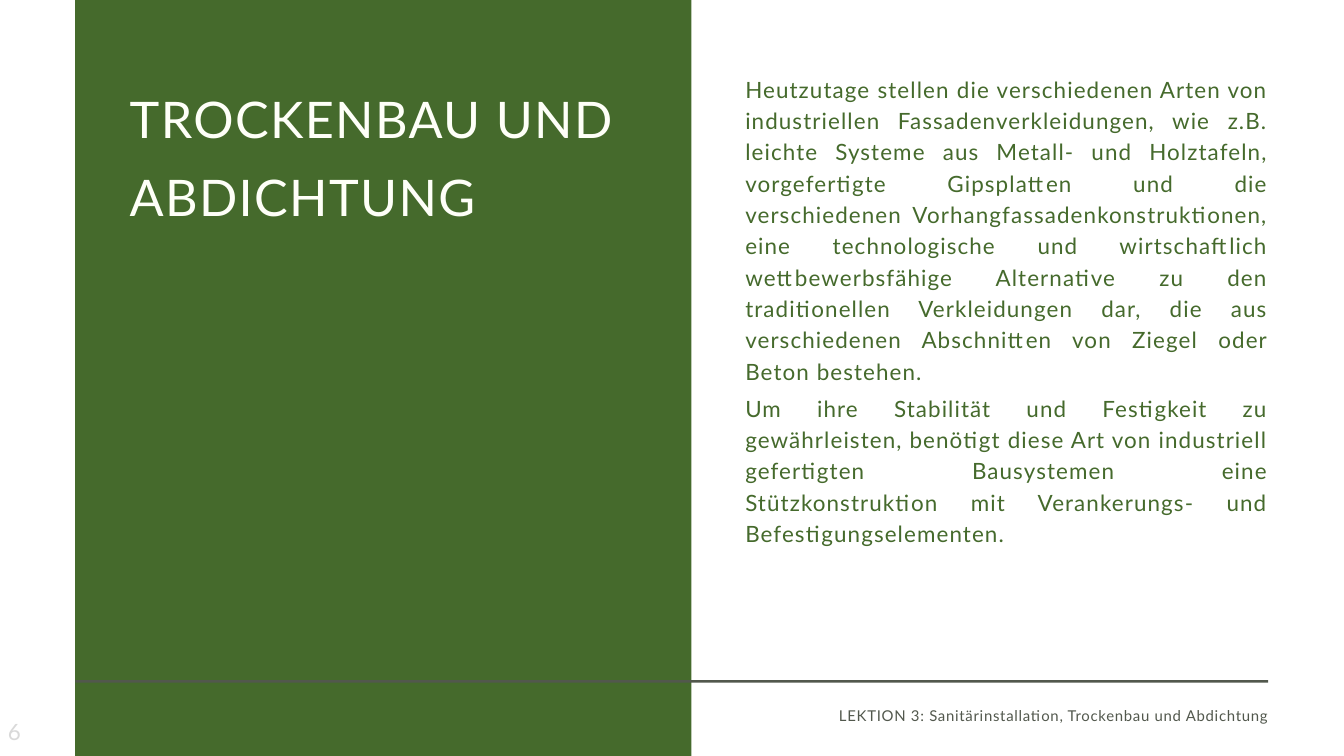
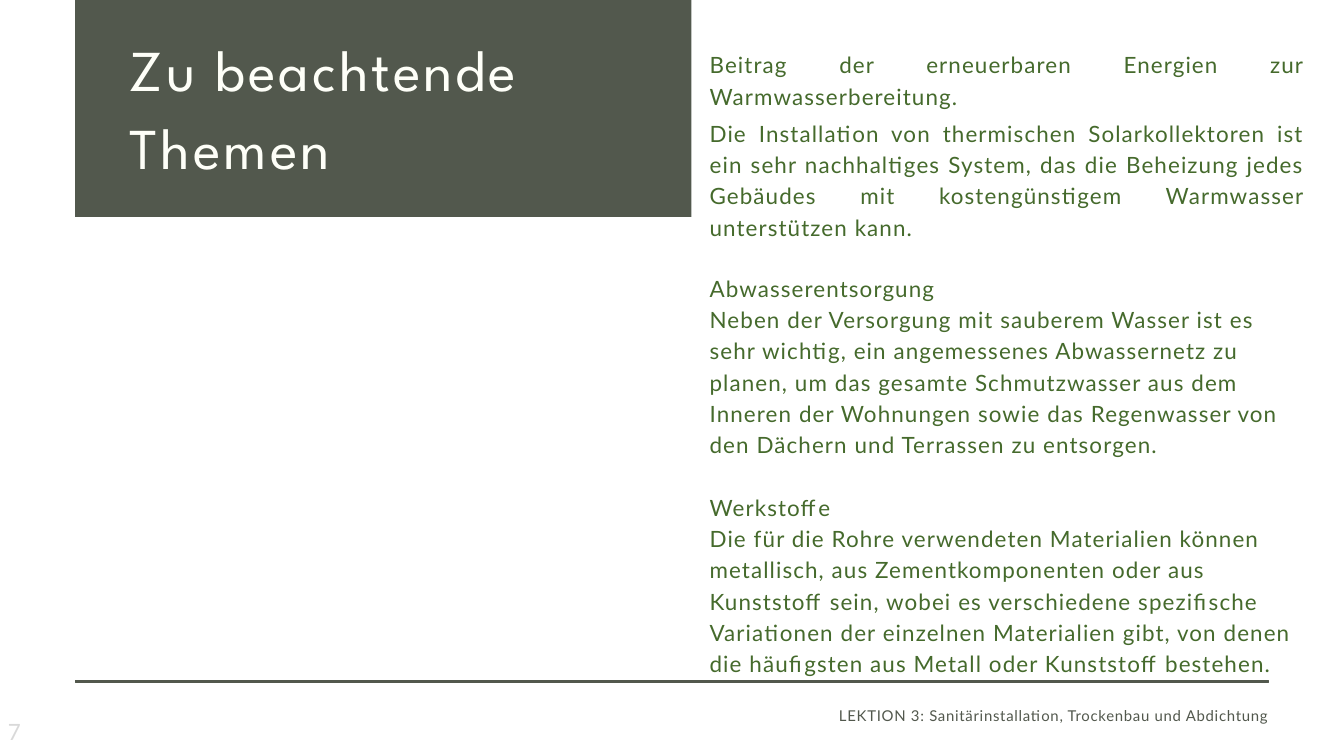
from dataclasses import dataclass, replace
from typing import Optional

from pptx import Presentation
from pptx import util as u
from pptx.dml.color import RGBColor
from pptx.enum import shapes, text

GREEN = RGBColor(0x45, 0x6A, 0x2C)
SLATE = RGBColor(0x52, 0x58, 0x4D)
CREAM = RGBColor(0xFE, 0xFF, 0xF8)
PALE = RGBColor(0xD9, 0xD9, 0xD9)

PANEL_LEFT, PANEL_WIDTH = 80.64, 660.24
TITLE_LEFT, TITLE_WIDTH = 138.96, 544.32
RULE_TOP, RULE_WIDTH, RULE_HEIGHT = 728.64, 1278, 2.88
COLUMN_LEFT, COLUMN_WIDTH = 760.32, 637.2
LESSON = "LEKTION 3: Sanitärinstallation, Trockenbau und Abdichtung"


@dataclass(frozen=True)
class Area:
    """A rectangle on the slide, in points."""
    left: float
    top: float
    width: float
    height: float

    def lengths(self) -> tuple:
        return tuple(u.Pt(v) for v in (self.left, self.top, self.width, self.height))


@dataclass(frozen=True)
class Style:
    """Type settings; tracking, leading and space after are in points."""
    size: float
    color: RGBColor
    tracking: float
    leading: Optional[float] = None
    after: float = 0
    align: text.PP_ALIGN = text.PP_ALIGN.LEFT
    font: str = "Lato"


@dataclass(frozen=True)
class Block:
    area: Area
    style: Style
    paragraphs: tuple


TOPIC = Style(24, GREEN, 1.2, 33.6)
BODY = replace(TOPIC, after=6, align=text.PP_ALIGN.JUSTIFY)
TITLE = Style(54, CREAM, 1.5, 83.7, after=6)
THEME_TITLE = Style(62, CREAM, 3.1, 83.7, font="League Spartan")
FOOTER = Style(16, SLATE, 0.8, 22.4, align=text.PP_ALIGN.RIGHT)
NUMBER = Style(24, PALE, 1.2)


@dataclass(frozen=True)
class Lesson:
    number: int
    panel: Area
    panel_color: RGBColor
    title: Block
    blocks: tuple
    rule_outline: float = 0


LESSONS = (
    Lesson(
        6, Area(PANEL_LEFT, -26.64, PANEL_WIDTH, 862.56), GREEN,
        Block(Area(TITLE_LEFT, 75.6, TITLE_WIDTH, 164.88), TITLE,
              ("TROCKENBAU UND ABDICHTUNG",)),
        (Block(Area(798.48, 76.32, 560.16, 565.2), BODY, (
            "Heutzutage stellen die verschiedenen Arten von industriellen "
            "Fassadenverkleidungen, wie z.B. leichte Systeme aus Metall- und "
            "Holztafeln, vorgefertigte Gipsplatten und die verschiedenen "
            "Vorhangfassadenkonstruktionen, eine technologische und "
            "wirtschaftlich wettbewerbsfähige Alternative zu den "
            "traditionellen Verkleidungen dar, die aus verschiedenen "
            "Abschnitten von Ziegel oder Beton bestehen.",
            "Um ihre Stabilität und Festigkeit zu gewährleisten, benötigt "
            "diese Art von industriell gefertigten Bausystemen eine "
            "Stützkonstruktion mit Verankerungs- und Befestigungselementen.",
        )),),
    ),
    Lesson(
        7, Area(PANEL_LEFT, -24.48, PANEL_WIDTH, 257.04), SLATE,
        Block(Area(TITLE_LEFT, 26.64, TITLE_WIDTH, 167.04), THEME_TITLE,
              ("Zu beachtende Themen",)),
        (
            Block(Area(COLUMN_LEFT, 50.4, COLUMN_WIDTH, 209.52), BODY, (
                "Beitrag der erneuerbaren Energien zur Warmwasserbereitung.",
                "Die Installation von thermischen Solarkollektoren ist ein "
                "sehr nachhaltiges System, das die Beheizung jedes Gebäudes "
                "mit kostengünstigem Warmwasser unterstützen kann.",
            )),
            Block(Area(COLUMN_LEFT, 289.44, COLUMN_WIDTH, 203.76), TOPIC, (
                "Abwasserentsorgung",
                "Neben der Versorgung mit sauberem Wasser ist es sehr wichtig, "
                "ein angemessenes Abwassernetz zu planen, um das gesamte "
                "Schmutzwasser aus dem Inneren der Wohnungen sowie das "
                "Regenwasser von den Dächern und Terrassen zu entsorgen.",
            )),
            Block(Area(COLUMN_LEFT, 524.16, COLUMN_WIDTH, 203.76), TOPIC, (
                "Werkstoffe",
                "Die für die Rohre verwendeten Materialien können metallisch, "
                "aus Zementkomponenten oder aus Kunststoff sein, wobei es "
                "verschiedene spezifische Variationen der einzelnen "
                "Materialien gibt, von denen die häufigsten aus Metall oder "
                "Kunststoff bestehen.",
            )),
        ),
        rule_outline=0.75,
    ),
)


def add_band(page, area: Area, color: RGBColor, outline: float = 0) -> None:
    band = page.shapes.add_shape(shapes.MSO_SHAPE.RECTANGLE, *area.lengths())
    band.shadow.inherit = False
    band.fill.solid()
    band.fill.fore_color.rgb = color
    if outline:
        band.line.color.rgb = color
        band.line.width = u.Pt(outline)
    else:
        band.line.fill.background()


def add_text(page, block: Block):
    """Add a text box without insets and return its text frame."""
    frame = page.shapes.add_textbox(*block.area.lengths()).text_frame
    frame.word_wrap = True
    frame.auto_size = text.MSO_AUTO_SIZE.SHAPE_TO_FIT_TEXT
    frame.margin_left = frame.margin_right = 0
    frame.margin_top = frame.margin_bottom = 0
    style = block.style
    for index, words in enumerate(block.paragraphs):
        para = frame.add_paragraph() if index else frame.paragraphs[0]
        para.alignment = style.align
        para.space_after = u.Pt(style.after)
        if style.leading:
            para.line_spacing = u.Pt(style.leading)
        span = para.add_run()
        span.text = words
        span.font.name = style.font
        span.font.size = u.Pt(style.size)
        span.font.color.rgb = style.color
        span._r.get_or_add_rPr().set("spc", str(round(style.tracking * 100)))
    return frame


def add_page_number(page, number: int) -> None:
    frame = add_text(page, Block(Area(1.44, 769.68, 167.76, 28.8), NUMBER, (str(number),)))
    frame.auto_size = text.MSO_AUTO_SIZE.NONE
    frame.vertical_anchor = text.MSO_ANCHOR.MIDDLE
    frame.margin_left = frame.margin_right = u.Pt(7.2)
    frame.margin_top = frame.margin_bottom = u.Pt(3.6)


def add_lesson(deck, lesson: Lesson) -> None:
    page = deck.slides.add_slide(deck.slide_layouts[6])
    add_band(page, lesson.panel, lesson.panel_color)
    add_band(page, Area(PANEL_LEFT, RULE_TOP, RULE_WIDTH, RULE_HEIGHT), SLATE,
             lesson.rule_outline)
    add_text(page, lesson.title)
    add_page_number(page, lesson.number)
    for block in lesson.blocks:
        add_text(page, block)
    add_text(page, Block(Area(COLUMN_LEFT, 753.84, 599.04, 20.88), FOOTER, (LESSON,)))


def main() -> None:
    deck = Presentation()
    deck.slide_width, deck.slide_height = u.Pt(1440), u.Pt(810)
    for lesson in LESSONS:
        add_lesson(deck, lesson)
    deck.save("out.pptx")


if __name__ == "__main__":
    main()
